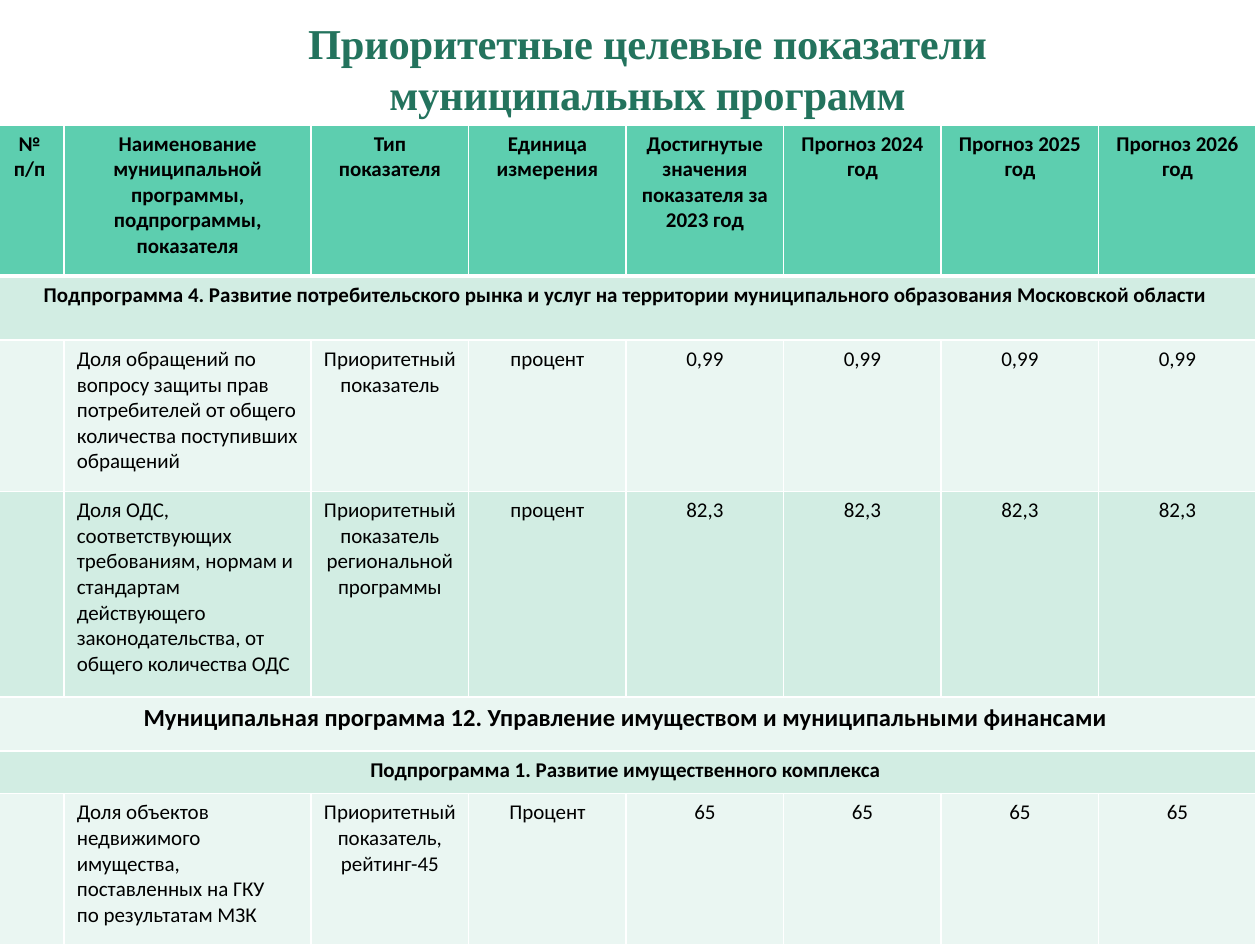
"""Build the slide with the table of priority municipal programme indicators."""
from dataclasses import dataclass

import lxml.etree
import pptx
import pptx.dml.color
import pptx.enum.text
import pptx.oxml.ns
import pptx.table
import pptx.util

Inches = pptx.util.Inches
Align = pptx.enum.text.PP_ALIGN
COLORS = {"title": "23735D", "header": "5DCEAF", "dark": "D2EDE3",
          "light": "EAF6F2", "text": "000000", "border": "FFFFFF"}
COLUMN_WIDTHS = [0.55, 1.96] + [1.25] * 6


@dataclass
class Row:
    height: float
    fill: str
    texts: list[str]
    size: int = 12
    bold: bool = False

    @property
    def is_section(self) -> bool:
        return len(self.texts) == 1


def indicator(height: float, fill: str, name: str, kind: str, unit: str, value: str) -> Row:
    return Row(height, fill, ["", name, kind, unit] + [value] * 4)


ROWS = [
    Row(1.2, "header",
        ["№ п/п", "Наименование муниципальной программы, подпрограммы, показателя",
         "Тип показателя", "Единица измерения", "Достигнутые значения показателя за 2023 год"]
        + [f"Прогноз {year} год" for year in (2024, 2025, 2026)], bold=True),
    Row(0.51, "dark", ["Подпрограмма 4. Развитие потребительского рынка и услуг на территории "
                       "муниципального образования Московской области"], bold=True),
    indicator(1.2, "light", "Доля обращений по вопросу защиты прав потребителей от общего "
              "количества поступивших обращений", "Приоритетный показатель", "процент", "0,99"),
    indicator(1.63, "dark", "Доля ОДС, соответствующих требованиям, нормам и стандартам "
              "действующего законодательства, от общего количества ОДС",
              "Приоритетный показатель региональной программы", "процент", "82,3"),
    Row(0.43, "light", ["Муниципальная программа 12. Управление имуществом и муниципальными "
                        "финансами"], size=14, bold=True),
    Row(0.34, "dark", ["Подпрограмма 1. Развитие имущественного комплекса"], bold=True),
    indicator(1.2, "light", "Доля объектов недвижимого имущества, поставленных на ГКУ\n"
              "по результатам МЗК", "Приоритетный показатель, рейтинг-45", "Процент", "65"),
]


def rgb(name: str) -> pptx.dml.color.RGBColor:
    return pptx.dml.color.RGBColor.from_string(COLORS[name])


def style_run(run, font: str, size: float, color: str, bold: bool) -> None:
    run.font.name = font
    run.font.size = pptx.util.Pt(size)
    run.font.bold = bold
    run.font.color.rgb = rgb(color)


def draw_borders(cell: pptx.table._Cell, top: int, bottom: int) -> None:
    qn = pptx.oxml.ns.qn
    properties = cell._tc.get_or_add_tcPr()
    sides = {"lnL": 1, "lnR": 1, "lnT": top, "lnB": bottom}
    for position, (side, width) in enumerate(sides.items()):
        line = lxml.etree.Element(qn(f"a:{side}"), w=str(pptx.util.Pt(width)))
        fill = lxml.etree.SubElement(line, qn("a:solidFill"))
        lxml.etree.SubElement(fill, qn("a:srgbClr"), val=COLORS["border"])
        properties.insert(position, line)


def fill_cell(cell: pptx.table._Cell, text: str, row: Row, align: Align) -> None:
    frame = cell.text_frame
    for number, line in enumerate(text.split("\n") if text else []):
        paragraph = frame.add_paragraph() if number else frame.paragraphs[0]
        paragraph.alignment = align
        run = paragraph.add_run()
        run.text = line
        style_run(run, "Calibri", row.size, "text", row.bold)


def add_title(slide) -> None:
    title = slide.shapes.title
    title.left, title.top = Inches(0.2), Inches(0.13)
    title.width, title.height = Inches(9.88), Inches(1.02)
    frame = title.text_frame
    frame.auto_size = pptx.enum.text.MSO_AUTO_SIZE.NONE
    frame.vertical_anchor = pptx.enum.text.MSO_ANCHOR.MIDDLE
    frame.margin_bottom = Inches(0.25)
    paragraph = frame.paragraphs[0]
    paragraph.alignment = Align.CENTER
    for number, line in enumerate(["Приоритетные целевые показатели", "муниципальных программ"]):
        if number:
            paragraph.add_line_break()
        run = paragraph.add_run()
        run.text = line
        style_run(run, "Times New Roman", 24.3, "title", True)
        run.font._element.set("spc", "-10")


def add_indicator_table(slide) -> None:
    table = slide.shapes.add_table(len(ROWS), len(COLUMN_WIDTHS), Inches(-0.04), Inches(0.99),
                                   Inches(10.04), Inches(6.51)).table
    for column, width in zip(table.columns, COLUMN_WIDTHS):
        column.width = Inches(width)
    for r, row in enumerate(ROWS):
        table.rows[r].height = Inches(row.height)
        if row.is_section:
            table.cell(r, 0).merge(table.cell(r, len(COLUMN_WIDTHS) - 1))
        for c in range(len(COLUMN_WIDTHS)):
            cell = table.cell(r, c)
            cell.fill.solid()
            cell.fill.fore_color.rgb = rgb(row.fill)
            draw_borders(cell, 3 if r == 1 else 1, 3 if r == 0 else 1)
            if c < len(row.texts):
                align = Align.LEFT if c == 1 and r else Align.CENTER
                fill_cell(cell, row.texts[c], row, align)


def main() -> None:
    presentation = pptx.Presentation()
    presentation.slide_width, presentation.slide_height = Inches(10), Inches(7.5)
    slide = presentation.slides.add_slide(presentation.slide_layouts[5])
    add_title(slide)
    add_indicator_table(slide)
    presentation.save("out.pptx")


if __name__ == "__main__":
    main()
